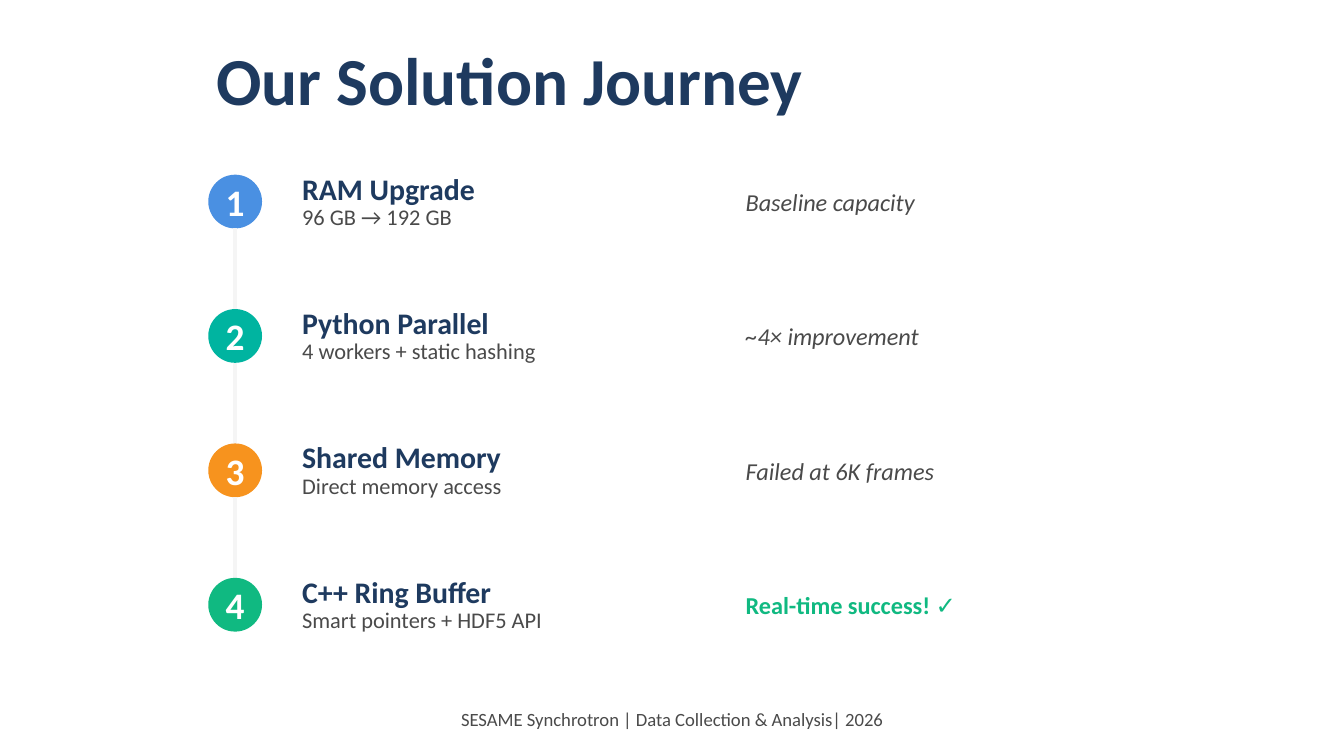
import pptx
import pptx.dml.color
import pptx.enum.shapes
import pptx.enum.text
import pptx.oxml.ns
import pptx.util
from lxml import etree

COLUMNS, ROWS = 100, 56.25
CELLS_PER_INCH = 10
NAVY, GREY, PALE, WHITE, GREEN = "1E3A5F", "4A4A4A", "F5F5F5", "FFFFFF", "10B981"
ALIGN = pptx.enum.text.PP_ALIGN
STEP_PITCH = 10
CIRCLE = 4
STEPS = [
    ("4A90E2", "RAM Upgrade", "96 GB → 192 GB", "Baseline capacity"),
    ("00B4A0", "Python Parallel", "4 workers + static hashing", "~4× improvement"),
    ("F7931E", "Shared Memory", "Direct memory access", "Failed at 6K frames"),
    (GREEN, "C++ Ring Buffer", "Smart pointers + HDF5 API", "Real-time success! ✓"),
]


def cells(count):
    """Turn a number of grid cells into a length."""
    return pptx.util.Inches(count / CELLS_PER_INCH)


def colour(code):
    """Turn a hex string into a colour."""
    return pptx.dml.color.RGBColor.from_string(code)


def add_label(page, box, text, size, code, bold=False, italic=False, align=ALIGN.LEFT):
    """Add a wrapping, vertically centred text box in a grid box."""
    frame = page.shapes.add_textbox(*map(cells, box)).text_frame
    frame.word_wrap = True
    frame.vertical_anchor = pptx.enum.text.MSO_ANCHOR.MIDDLE
    para = frame.paragraphs[0]
    para.alignment = align
    span = para.add_run()
    span.text = text
    span.font.name = "Calibri"
    span.font.size = pptx.util.Pt(size)
    span.font.bold = bold
    span.font.italic = italic
    span.font.color.rgb = colour(code)


def add_circle(page, box, number, code):
    """Add a filled circle with its number in a grid box."""
    circle = page.shapes.add_shape(
        pptx.enum.shapes.MSO_SHAPE.OVAL, *map(cells, box))
    circle.shadow.inherit = False
    circle.fill.solid()
    circle.fill.fore_color.rgb = colour(code)
    circle.line.fill.background()
    add_label(page, box, str(number), 20, WHITE, bold=True, align=ALIGN.CENTER)


def add_link(page, x, top, bottom):
    """Add a pale vertical line between two circles."""
    link = page.shapes.add_connector(
        pptx.enum.shapes.MSO_CONNECTOR.STRAIGHT,
        cells(x), cells(top), cells(x), cells(bottom))
    link.line.color.rgb = colour(PALE)
    link.line.width = pptx.util.Pt(2)
    etree.SubElement(link._element.spPr, pptx.oxml.ns.qn("a:effectLst"))


def add_step(page, box, number, step, last):
    """Add one step: circle, heading, detail, result and link."""
    left, top, width, height = box
    code, heading, detail, result = step
    add_circle(page, (left, top, CIRCLE, CIRCLE), number, code)
    add_label(page, (left + 6, top, 30, 2), heading, 16, NAVY, bold=True)
    add_label(page, (left + 6, top + 2.2, 30, 1.8), detail, 12, GREY)
    add_label(page, (left + width - 25, top + 0.5, 25, 3), result, 13,
              code if last else GREY, bold=last, italic=not last)
    if not last:
        add_link(page, left + CIRCLE / 2, top + CIRCLE, top + height)


def add_timeline(page, box):
    """Stack the steps down a grid box."""
    left, top, width, height = box
    pitch = height / len(STEPS)
    for index, step in enumerate(STEPS):
        add_step(page, (left, top + index * pitch, width, pitch),
                 index + 1, step, index == len(STEPS) - 1)


def main():
    """Build and save the slide."""
    deck = pptx.Presentation()
    deck.slide_width, deck.slide_height = cells(COLUMNS), cells(ROWS)
    page = deck.slides.add_slide(deck.slide_layouts[6])
    page.background.fill.solid()
    page.background.fill.fore_color.rgb = colour(WHITE)
    add_label(page, (15.1, 3.36, 56.3, 5), "Our Solution Journey", 36, NAVY, bold=True)
    add_timeline(page, (15.5, 13, 64, STEP_PITCH * len(STEPS)))
    add_label(page, (5, 52, COLUMNS - 10, 3),
              "SESAME Synchrotron | Data Collection & Analysis| 2026",
              10, GREY, align=ALIGN.CENTER)
    deck.save("out.pptx")


if __name__ == "__main__":
    main()
